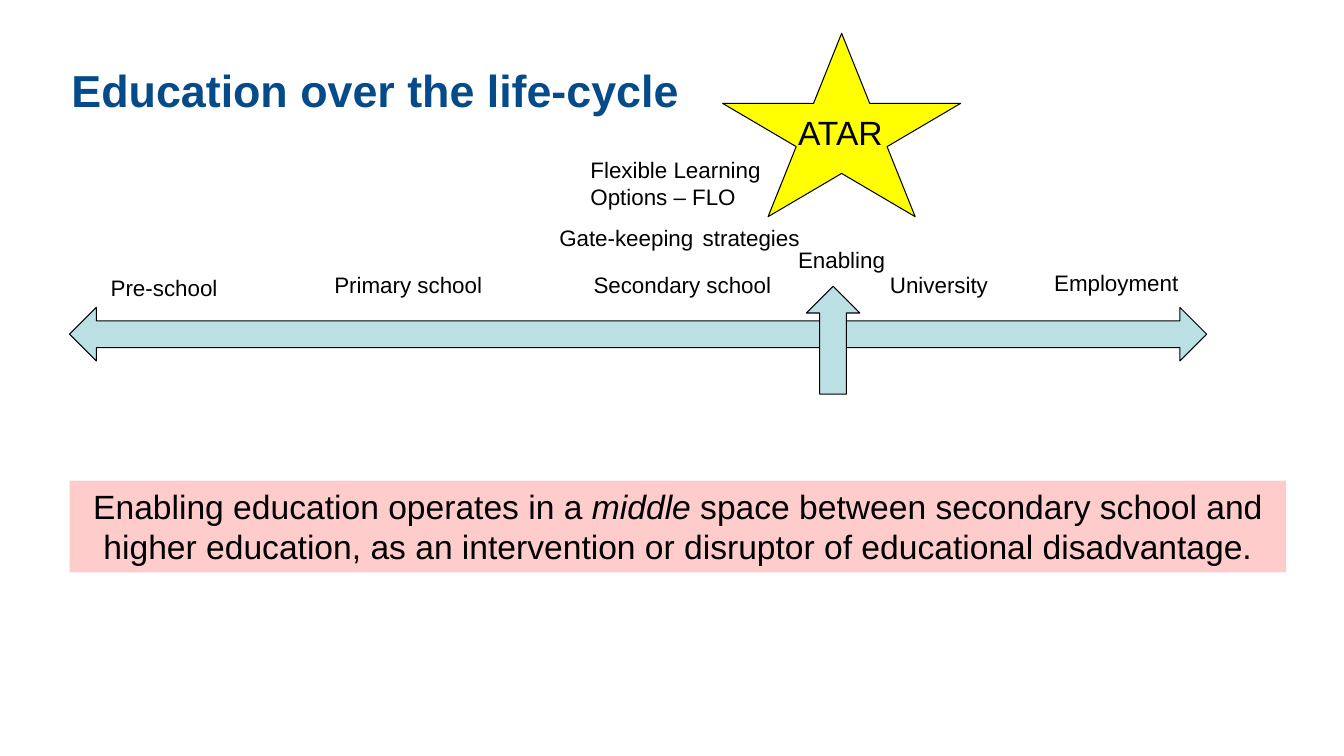
"""Build the slide 'Education over the life-cycle'."""
from pptx import Presentation
from pptx.dml.color import RGBColor
from pptx.enum import shapes, text
from pptx.util import Pt

BLACK = RGBColor(0, 0, 0)
NAVY = RGBColor(0x05, 0x4A, 0x89)
YELLOW = RGBColor(0xFF, 0xFF, 0)
PALE_TEAL = RGBColor(0xBB, 0xE0, 0xE3)
PINK = RGBColor(0xFF, 0xCC, 0xCC)


def add_figure(preset, box, fill):
    figure = slide.shapes.add_shape(preset, *map(Pt, box))
    figure.shadow.inherit = False
    figure.fill.solid()
    figure.fill.fore_color.rgb = fill
    figure.line.color.rgb = BLACK
    figure.line.width = Pt(0.75)
    return figure


def write(frame, pieces, size, color=BLACK):
    frame.word_wrap = True
    frame.vertical_anchor = text.MSO_ANCHOR.TOP
    paragraph = frame.paragraphs[0]
    for piece in pieces:
        run = paragraph.add_run()
        run.text = piece
        run.font.name = "Arial"
        run.font.size = Pt(size)
        run.font.color.rgb = color
    return paragraph


presentation = Presentation()
presentation.slide_width = Pt(960)
presentation.slide_height = Pt(540)
slide = presentation.slides.add_slide(presentation.slide_layouts[6])

add_figure(shapes.MSO_SHAPE.STAR_5_POINT, (516.2, 23.8, 170, 131), YELLOW)

title = slide.shapes.add_textbox(Pt(44), Pt(45.4), Pt(870), Pt(67.7))
heading = write(title.text_frame, ["Education over the life-cycle"], 32, NAVY)
heading.line_spacing = 0.9
heading.runs[0].font.bold = True

add_figure(shapes.MSO_SHAPE.LEFT_RIGHT_ARROW, (49.7, 219.6, 812.2, 38.2), PALE_TEAL)

message = add_figure(shapes.MSO_SHAPE.RECTANGLE, (49.7, 343.4, 869, 65.5), PINK)
message.line.fill.background()
statement = write(message.text_frame, [
    "Enabling education operates in a ",
    "middle",
    " space between secondary school and higher education, "
    "as an intervention or disruptor of educational disadvantage.",
], 24)
statement.alignment = text.PP_ALIGN.CENTER
statement.runs[1].font.italic = True

add_figure(shapes.MSO_SHAPE.UP_ARROW, (576, 204.5, 38.2, 77), PALE_TEAL)

labels = [
    (["Pre-school"], 72, 192.5, 102, 27, 16),
    (["Primary school"], 231.8, 190, 130, 27, 16),
    (["Secondary school"], 416.9, 190, 222, 27, 16),
    (["University"], 628.6, 190, 130, 27, 16),
    (["Employment"], 745.9, 189, 150, 27, 16),
    (["Enabling"], 563, 172.3, 102, 27, 16),
    (["Gate-keeping", " ", "strategies"], 392.4, 148.3, 214, 36, 16),
    (["Flexible Learning Options – FLO"], 414.7, 108, 168.5, 46, 16),
    (["ATAR"], 563, 76.3, 102, 36, 24),
]
for pieces, left, top, width, height, size in labels:
    label = slide.shapes.add_textbox(Pt(left), Pt(top), Pt(width), Pt(height))
    caption = write(label.text_frame, pieces, size)
    for run in caption.runs:
        if run.text == " ":
            run.font.size = Pt(24)

presentation.save("out.pptx")
